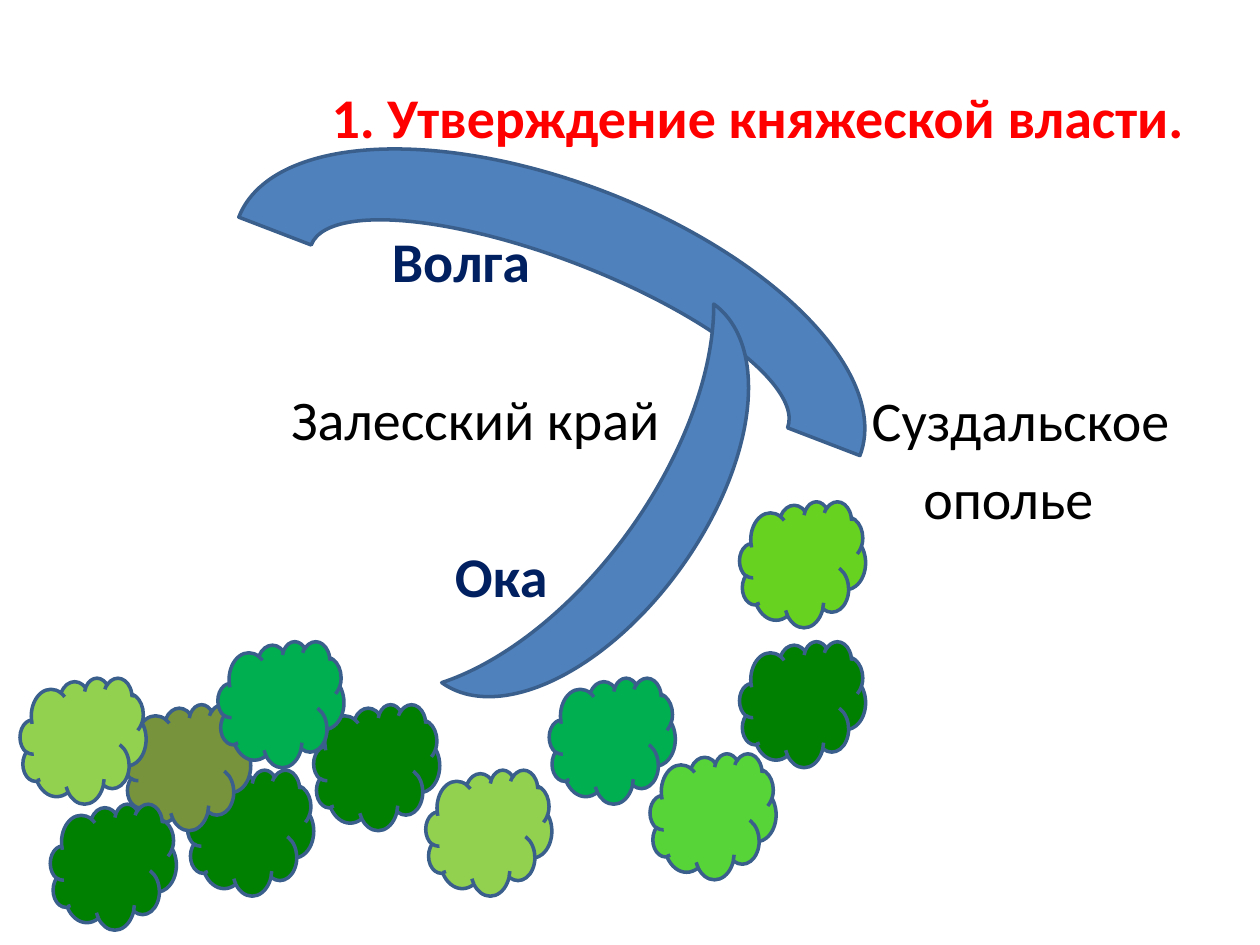
from lxml import etree
from pptx import Presentation
from pptx import util as u
from pptx.dml.color import RGBColor
from pptx.enum import shapes, text
from pptx.oxml.ns import qn

THEME = {
    "title": "FF0000", "body": "000000", "river_name": "002060",
    "water": "4F81BD", "outline": "3A5F8C",
    "dark": "008000", "olive": "77933C", "green": "00B050",
    "light": "92D050", "bright": "56D438", "lime": "68D220",
    "font": "Calibri", "size": u.Pt(32), "line": u.Pt(2),
    "gap": u.Pt(6.2), "line_pitch": u.Pt(45.3),
}

deck = Presentation()
deck.slide_width, deck.slide_height = u.Inches(10), u.Inches(7.5)
UNIT = deck.slide_width // 100  # all lengths are percent of the slide width
page = deck.slides.add_slide(deck.slide_layouts[1])


def place_shape(kind, left, top, width, height, colour, turn=0):
    shape = page.shapes.add_shape(kind, *(round(n * UNIT) for n in (left, top, width, height)))
    shape.rotation = turn
    shape.shadow.inherit = False
    shape.fill.solid()
    shape.fill.fore_color.rgb = RGBColor.from_string(THEME[colour])
    shape.line.color.rgb = RGBColor.from_string(THEME["outline"])
    shape.line.width = THEME["line"]


def style_text(para, colour, bold):
    for span in para.runs:
        span.font.name, span.font.size, span.font.bold = THEME["font"], THEME["size"], bold
        span.font.color.rgb = RGBColor.from_string(THEME[colour])


# Title, map labels in the body, and the region east of the rivers
title, body = page.shapes.title, page.placeholders[1]
region = page.shapes.add_textbox(0, 0, UNIT, UNIT)
for box, left, top, width, height in (
    (title, 5, 3, 90, 12.5), (body, 5, 17.5, 90, 49.5), (region, 68.2, 30.1, 28, 13),
):
    box.left, box.top = round(left * UNIT), round(top * UNIT)
    box.width, box.height = round(width * UNIT), round(height * UNIT)
    box.text_frame.word_wrap = True
    box.text_frame.auto_size = text.MSO_AUTO_SIZE.NONE

title.text_frame.text = "1. Утверждение княжеской власти."
title.text_frame.vertical_anchor = text.MSO_ANCHOR.MIDDLE
title.text_frame.paragraphs[0].alignment = text.PP_ALIGN.RIGHT
style_text(title.text_frame.paragraphs[0], "title", True)

# Labels: wording, indent, space before, colour, bold
two_lines = THEME["gap"] + THEME["line_pitch"]
body_labels = [
    ("Волга", 25.1, 0, "river_name", True),
    ("Залесский край", 17.1, two_lines, "body", False),
    ("Ока", 30.1, two_lines, "river_name", True),
]
region_labels = [
    ("Суздальское", 0, 0, "body", False),
    ("ополье", 4.1, THEME["gap"], "body", False),
]
for box, labels in ((body, body_labels), (region, region_labels)):
    box.text_frame.text = "\n".join(label[0] for label in labels)
    for para, (_, indent, gap, colour, bold) in zip(box.text_frame.paragraphs, labels):
        props = para._p.get_or_add_pPr()
        props.set("marL", str(round(indent * UNIT)))
        props.set("indent", "0")
        etree.SubElement(props, qn("a:buNone"))
        para.space_before = u.Emu(gap)
        style_text(para, colour, bold)

# Rivers
place_shape(shapes.MSO_SHAPE.BLOCK_ARC, 17.2, 14.4, 52.8, 24.6, "water", 21)
place_shape(shapes.MSO_SHAPE.MOON, 44.9, 23.6, 10.1, 37, "water", 215.7)

# Forest
TREE = 10
trees = [
    (14.9, 61.1, "dark"), (9.9, 55.9, "olive"), (24.9, 55.9, "dark"),
    (17.3, 50.9, "green"), (33.8, 61.1, "light"), (4, 63.8, "dark"),
    (1.6, 53.8, "light"), (43.6, 53.8, "green"), (58.7, 50.9, "dark"),
    (51.6, 59.8, "bright"), (58.7, 39.8, "lime"),
]
for left, top, colour in trees:
    place_shape(shapes.MSO_SHAPE.CLOUD, left, top, TREE, TREE, colour)

deck.save("out.pptx")
